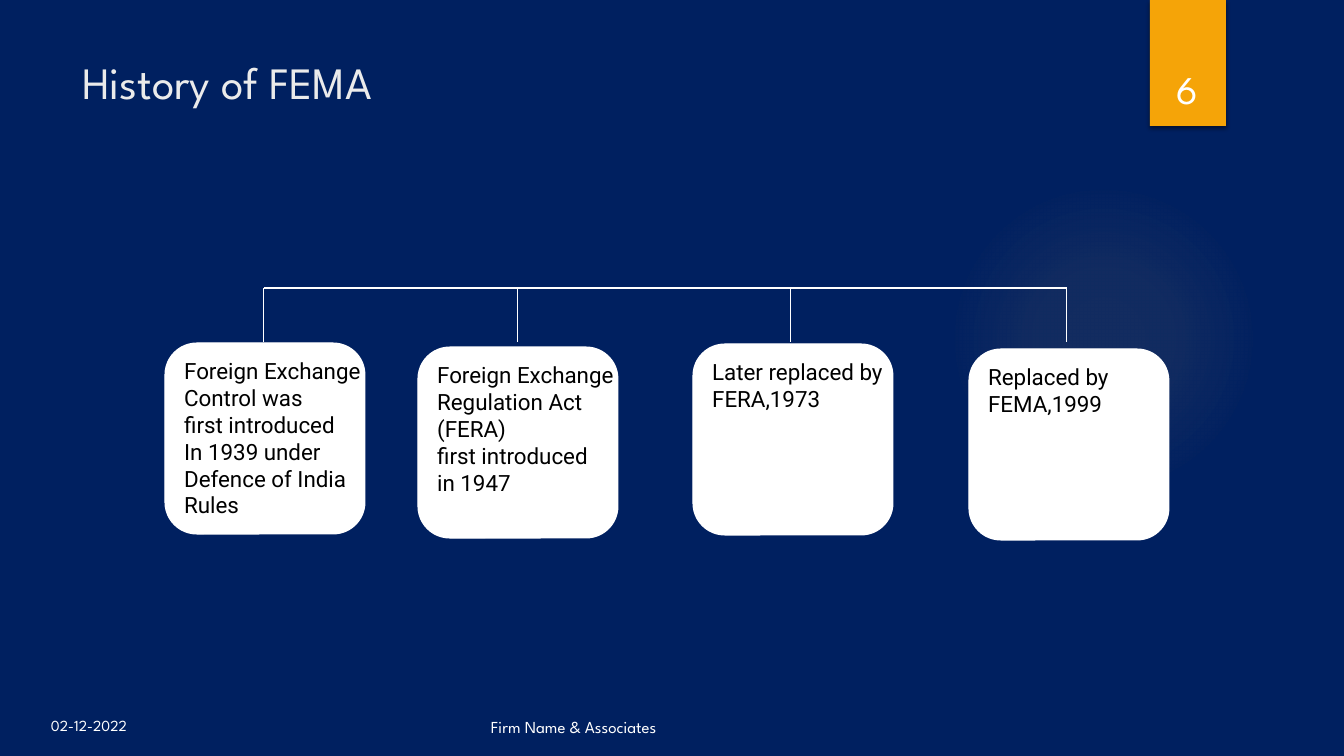
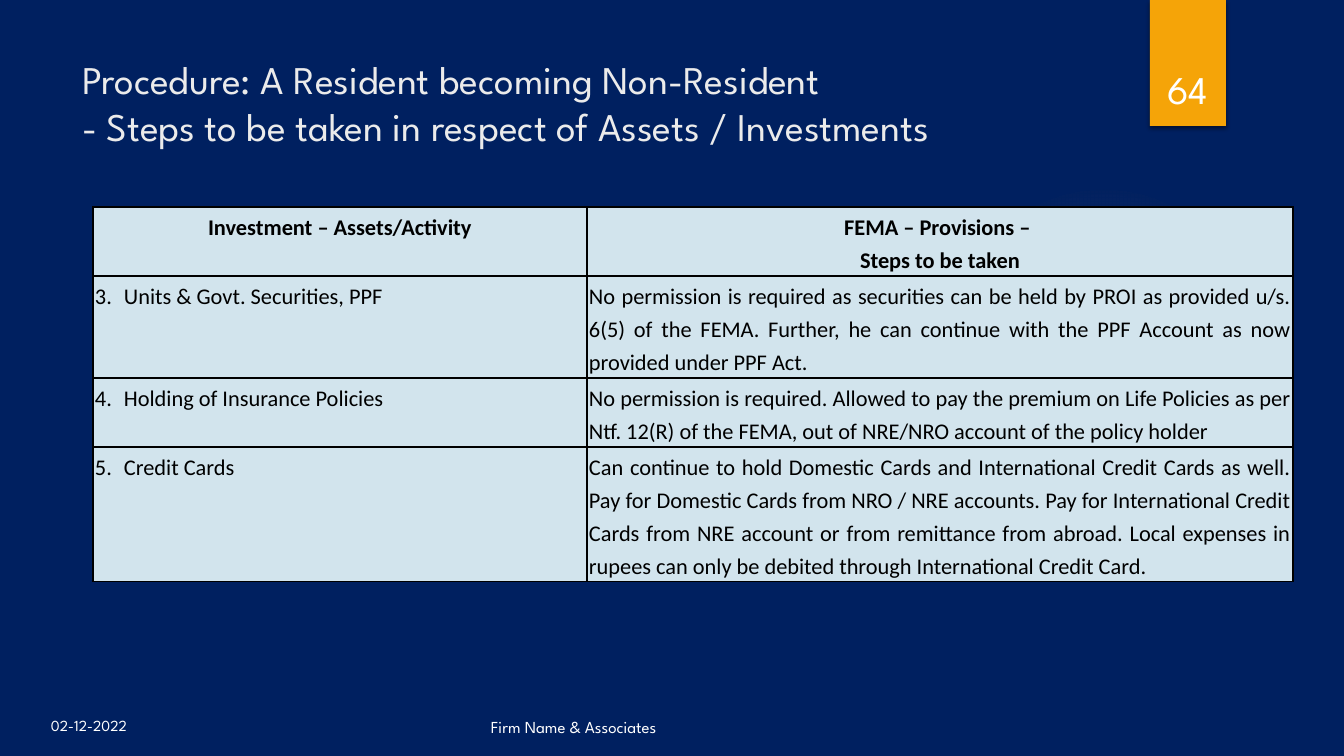
from dataclasses import dataclass
from typing import Any

from lxml.etree import SubElement
from pptx import Presentation
from pptx.dml.color import RGBColor
from pptx.enum.shapes import MSO_CONNECTOR, MSO_SHAPE
from pptx.enum.text import MSO_ANCHOR, MSO_AUTO_SIZE, PP_ALIGN
from pptx.oxml import parse_xml
from pptx.oxml.ns import nsdecls, qn
from pptx.util import Emu, Pt

PAGE_WIDTH, PAGE_HEIGHT = 1344, 756
EMU_PER_PX = 12192000 / PAGE_WIDTH

NAVY = RGBColor(0x00, 0x20, 0x60)
AMBER = RGBColor(0xF5, 0xA4, 0x08)
GLOW = RGBColor(0xFA, 0xC9, 0x6A)
PALE_BLUE = RGBColor(0xD2, 0xE4, 0xED)
TITLE_GREY = RGBColor(0xEB, 0xEB, 0xEB)
WHITE = RGBColor(0xFF, 0xFF, 0xFF)
BLACK = RGBColor(0x00, 0x00, 0x00)

HEADING_FONT, BOX_FONT, TABLE_FONT = "League Spartan", "Roboto", "Calibri"


def px(length: int) -> Emu:
    return Emu(round(length * EMU_PER_PX))


@dataclass(frozen=True)
class Area:
    left: int
    top: int
    width: int
    height: int

    def emu(self) -> tuple[Emu, ...]:
        return tuple(px(n) for n in (self.left, self.top, self.width, self.height))


@dataclass(frozen=True)
class TextStyle:
    font: str
    size: int
    color: RGBColor
    bold: bool = False
    align: PP_ALIGN = PP_ALIGN.LEFT
    line_spacing: float = 1.0


@dataclass(frozen=True)
class Label:
    area: Area
    style: TextStyle
    anchor: MSO_ANCHOR


@dataclass(frozen=True)
class Stage:
    left: int
    top: int
    stem: int
    text: str


TITLE_AREA = Area(72, 50, 1037, 154)
GLOW_AREA = Area(949, 184, 310, 310)
BAND_AREA = Area(1150, 0, 76, 126)
DATE = Label(Area(41, 711, 109, 33), TextStyle(HEADING_FONT, 11, WHITE), MSO_ANCHOR.TOP)
FIRM = Label(Area(481, 709, 425, 33), TextStyle(HEADING_FONT, 12, WHITE), MSO_ANCHOR.BOTTOM)
NUMBER = Label(
    Area(1141, 32, 93, 85),
    TextStyle(HEADING_FONT, 28, WHITE, align=PP_ALIGN.CENTER),
    MSO_ANCHOR.BOTTOM,
)

STAGE_WIDTH, STAGE_HEIGHT = 200, 191
RAIL_TOP, STEM_BOTTOM = 288, 342
STAGE_STYLE = TextStyle(BOX_FONT, 16, BLACK)
STAGES = (
    Stage(165, 343, 264, "Foreign Exchange\nControl was\nfirst introduced\n"
                         "In 1939 under\nDefence of India\nRules"),
    Stage(418, 347, 518, "Foreign Exchange\nRegulation Act\n(FERA)\n"
                         "first introduced\nin 1947"),
    Stage(693, 344, 791, "Later replaced by\nFERA,1973"),
    Stage(969, 349, 1067, "Replaced by\nFEMA,1999"),
)

TABLE_LEFT, TABLE_TOP = 93, 207
COLUMN_WIDTHS = (494, 706)
ROW_HEIGHTS = (69, 102, 69, 135)
CELL_INSET, NUMBER_INDENT = 2, 29
HEADER_STYLE = TextStyle(TABLE_FONT, 16, BLACK, True, PP_ALIGN.CENTER, 1.2)
CELL_STYLE = TextStyle(TABLE_FONT, 16, BLACK, False, PP_ALIGN.JUSTIFY, 1.2)
TABLE_ROWS = (
    ("Investment – Assets/Activity", "FEMA – Provisions – \nSteps to be taken"),
    (
        "3.\tUnits & Govt. Securities, PPF",
        "No permission is required as securities can be held by PROI as provided "
        "u/s. 6(5) of the FEMA. Further, he can continue with the PPF Account as "
        "now provided under PPF Act.",
    ),
    (
        "4.\tHolding of Insurance Policies",
        "No permission is required. Allowed to pay the premium on Life Policies as "
        "per Ntf. 12(R) of the FEMA, out of NRE/NRO account of the policy holder",
    ),
    (
        "5.\tCredit Cards",
        "Can continue to hold Domestic Cards and International Credit Cards as well. "
        "Pay for Domestic Cards from NRO / NRE accounts. Pay for International "
        "Credit Cards from NRE account or from remittance from abroad. Local "
        "expenses in rupees can only be debited through International Credit Card.",
    ),
)


def set_values(target: Any, values: dict[str, Any]) -> None:
    for name, value in values.items():
        setattr(target, name, value)


def write(frame: Any, text: str, style: TextStyle) -> None:
    """Fill a text frame, one paragraph for each line of text."""
    frame.text = text
    for para in frame.paragraphs:
        set_values(para, {"alignment": style.align, "line_spacing": style.line_spacing})
        for span in para.runs:
            set_values(span.font, {"name": style.font, "size": Pt(style.size),
                                   "bold": style.bold})
            span.font.color.rgb = style.color


def add_label(page: Any, label: Label, text: str) -> None:
    frame = page.shapes.add_textbox(*label.area.emu()).text_frame
    set_values(frame, {"word_wrap": True, "vertical_anchor": label.anchor})
    write(frame, text, label.style)


def add_solid(page: Any, kind: MSO_SHAPE, area: Area, color: RGBColor) -> Any:
    shape = page.shapes.add_shape(kind, *area.emu())
    shape.shadow.inherit = False
    shape.fill.solid()
    shape.fill.fore_color.rgb = color
    shape.line.fill.background()
    return shape


def add_glow(page: Any) -> None:
    """Draw the faint round light that fades to nothing."""
    glow = add_solid(page, MSO_SHAPE.OVAL, GLOW_AREA, GLOW)
    stops = "".join(
        f'<a:gs pos="{place * 1000}"><a:srgbClr val="{GLOW}">'
        f'<a:alpha val="{opacity * 1000}"/></a:srgbClr></a:gs>'
        for place, opacity in ((0, 7), (36, 6), (69, 0))
    )
    gradient = parse_xml(
        f'<a:gradFill {nsdecls("a")}><a:gsLst>{stops}</a:gsLst><a:path path="circle">'
        '<a:fillToRect l="50000" t="50000" r="50000" b="50000"/></a:path></a:gradFill>'
    )
    properties = glow.element.spPr
    properties.replace(properties.find(qn("a:solidFill")), gradient)


def add_band(page: Any) -> None:
    band = add_solid(page, MSO_SHAPE.RECTANGLE, BAND_AREA, AMBER)
    effects = band.element.spPr.find(qn("a:effectLst"))
    effects.append(parse_xml(
        f'<a:outerShdw {nsdecls("a")} blurRad="{Pt(3)}" dist="{Pt(2)}" dir="5400000" '
        f'rotWithShape="0"><a:srgbClr val="{BLACK}"><a:alpha val="45000"/>'
        '</a:srgbClr></a:outerShdw>'
    ))


def add_page(deck: Any, title: str, title_size: int, number: str) -> Any:
    """Add a slide with everything that all slides share."""
    page = deck.slides.add_slide(deck.slide_layouts.get_by_name("Title Only"))
    add_glow(page)
    add_band(page)
    heading = page.shapes.title
    set_values(heading, dict(zip(("left", "top", "width", "height"), TITLE_AREA.emu())))
    set_values(heading.text_frame, {"word_wrap": True, "auto_size": MSO_AUTO_SIZE.NONE,
                                    "vertical_anchor": MSO_ANCHOR.TOP})
    write(heading.text_frame, title, TextStyle(HEADING_FONT, title_size, TITLE_GREY))
    for label, text in ((DATE, "02-12-2022"), (FIRM, "Firm Name & Associates"),
                        (NUMBER, number)):
        add_label(page, label, text)
    return page


def add_line(page: Any, start: tuple[int, int], end: tuple[int, int]) -> None:
    points = (px(n) for n in (*start, *end))
    line = page.shapes.add_connector(MSO_CONNECTOR.STRAIGHT, *points)
    line.line.color.rgb = WHITE
    line.line.width = Pt(0.75)
    SubElement(line.element.spPr, qn("a:effectLst"))


def add_stage(page: Any, stage: Stage) -> None:
    add_line(page, (stage.stem, STEM_BOTTOM), (stage.stem, RAIL_TOP))
    area = Area(stage.left, stage.top, STAGE_WIDTH, STAGE_HEIGHT)
    box = add_solid(page, MSO_SHAPE.ROUNDED_RECTANGLE, area, WHITE)
    box.line.color.rgb = WHITE
    box.line.width = Pt(0.75)
    set_values(box.text_frame, {"word_wrap": False, "vertical_anchor": MSO_ANCHOR.TOP})
    write(box.text_frame, stage.text, STAGE_STYLE)


def add_borders(cell: Any) -> None:
    properties = cell._tc.get_or_add_tcPr()
    for side in "LRTB":
        properties.append(parse_xml(
            f'<a:ln{side} {nsdecls("a")} w="{Pt(1)}"><a:solidFill>'
            f'<a:srgbClr val="{BLACK}"/></a:solidFill></a:ln{side}>'
        ))


def hang_number(para: Any) -> None:
    """Indent the text after the typed number by a tab."""
    indent = px(NUMBER_INDENT)
    properties = para._p.get_or_add_pPr()
    properties.set("marL", str(indent))
    properties.set("indent", str(-indent))
    tabs = SubElement(properties, qn("a:tabLst"))
    SubElement(tabs, qn("a:tab"), pos=str(indent), algn="l")


def fill_cell(cell: Any, text: str, style: TextStyle) -> None:
    inset = px(CELL_INSET)
    sides = ("margin_left", "margin_right", "margin_top", "margin_bottom")
    set_values(cell, dict.fromkeys(sides, inset))
    add_borders(cell)
    cell.fill.solid()
    cell.fill.fore_color.rgb = PALE_BLUE
    write(cell.text_frame, text, style)
    if "\t" in text:
        hang_number(cell.text_frame.paragraphs[0])


def add_provisions(page: Any) -> None:
    area = Area(TABLE_LEFT, TABLE_TOP, sum(COLUMN_WIDTHS), sum(ROW_HEIGHTS))
    table = page.shapes.add_table(len(ROW_HEIGHTS), len(COLUMN_WIDTHS), *area.emu()).table
    set_values(table, {"first_row": False, "horz_banding": False})
    for column, width in zip(table.columns, COLUMN_WIDTHS):
        column.width = px(width)
    for index, (row, height, texts) in enumerate(zip(table.rows, ROW_HEIGHTS, TABLE_ROWS)):
        row.height = px(height)
        for cell, text in zip(row.cells, texts):
            fill_cell(cell, text, CELL_STYLE if index else HEADER_STYLE)


def main() -> None:
    deck = Presentation()
    set_values(deck, {"slide_width": px(PAGE_WIDTH), "slide_height": px(PAGE_HEIGHT)})
    background = deck.slide_master.background.fill
    background.solid()
    background.fore_color.rgb = NAVY

    history = add_page(deck, "History of FEMA", 32, "6")
    add_line(history, (STAGES[0].stem, RAIL_TOP), (STAGES[-1].stem, RAIL_TOP))
    for stage in STAGES:
        add_stage(history, stage)

    procedure = add_page(
        deck,
        "Procedure: A Resident becoming Non-Resident\n"
        "- Steps to be taken in respect of Assets / Investments",
        28,
        "64",
    )
    add_provisions(procedure)
    deck.save("out.pptx")


if __name__ == "__main__":
    main()
